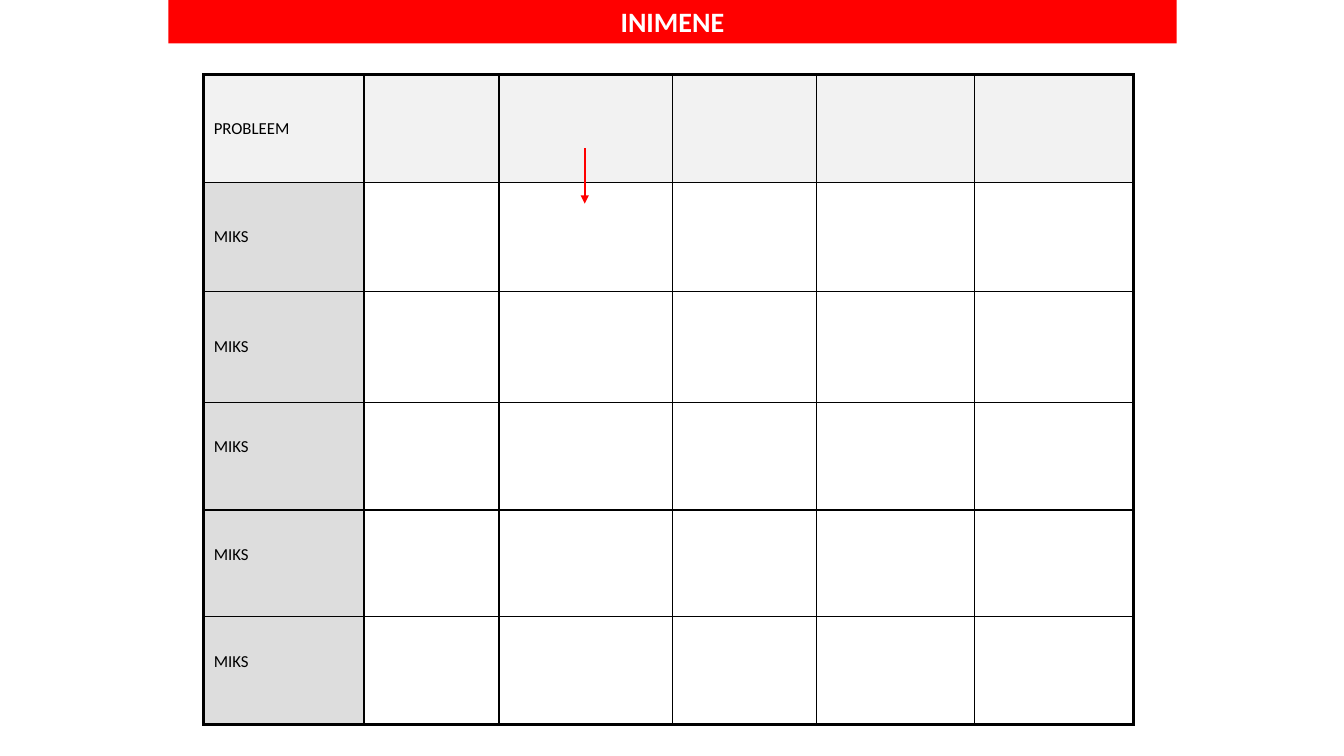
"""Build the INIMENE five-whys slide."""
from dataclasses import dataclass

from lxml import etree
from pptx import Presentation
from pptx.dml.color import RGBColor
from pptx.enum import shapes, text
from pptx.oxml import ns
from pptx.util import Inches, Pt

RED = RGBColor(0xFF, 0x00, 0x00)
WHITE = RGBColor(0xFF, 0xFF, 0xFF)
BLACK = RGBColor(0x00, 0x00, 0x00)
HEADER_GREY = RGBColor(0xE7, 0xE6, 0xE6)
LABEL_GREY = RGBColor(0xDD, 0xDD, 0xDD)
FONT = "Calibri"
COLS = [1.59, 1.34, 1.72, 1.43, 1.57, 1.57]
THIN, THICK = 1, 2.25


@dataclass
class Row:
    label: str
    height: float
    bottom: float = 0.05


ROWS = [
    Row("PROBLEEM", 1.07),
    Row("MIKS", 1.08),
    Row("MIKS", 1.10),
    Row("MIKS", 1.07, 0.23),
    Row("MIKS", 1.06, 0.23),
    Row("MIKS", 1.07, 0.23),
]


def write(tf, content: str, *, size: float, color: RGBColor, bold: bool = False,
          align=text.PP_ALIGN.LEFT) -> None:
    """Put one formatted run in a text frame."""
    p = tf.paragraphs[0]
    p.alignment = align
    r = p.add_run()
    r.text = content
    r.font.name, r.font.size, r.font.bold = FONT, Pt(size), bold
    r.font.color.rgb = color


def add_banner(s) -> None:
    """Draw the red title bar."""
    sp = s.shapes.add_shape(shapes.MSO_SHAPE.RECTANGLE, Inches(1.67), Inches(0),
                            Inches(10), Inches(0.43))
    sp.shadow.inherit = False
    sp.fill.solid()
    sp.fill.fore_color.rgb = RED
    sp.line.fill.background()
    tf = sp.text_frame
    tf.word_wrap = True
    tf.vertical_anchor = text.MSO_ANCHOR.MIDDLE
    write(tf, "INIMENE", size=20, color=WHITE, bold=True, align=text.PP_ALIGN.CENTER)


def fill_cell(cell, row: int, col: int) -> None:
    """Shade the header row and the label column."""
    if row == 0:
        cell.fill.solid()
        cell.fill.fore_color.rgb = HEADER_GREY
        clr = cell._tc.tcPr.find(".//" + ns.qn("a:srgbClr"))
        etree.SubElement(clr, ns.qn("a:alpha"), val="50000")
    elif col == 0:
        cell.fill.solid()
        cell.fill.fore_color.rgb = LABEL_GREY
    else:
        cell.fill.background()


def border_cell(cell, row: int, col: int) -> None:
    """Draw thin inner borders and a thick outer frame."""
    outer = {"L": col == 0, "R": col == len(COLS) - 1,
             "T": row == 0, "B": row == len(ROWS) - 1}
    for i, (side, is_outer) in enumerate(outer.items()):
        ln = etree.Element(ns.qn(f"a:ln{side}"), w=str(Pt(THICK if is_outer else THIN)))
        solid = etree.SubElement(ln, ns.qn("a:solidFill"))
        etree.SubElement(solid, ns.qn("a:srgbClr"), val=str(BLACK))
        cell._tc.tcPr.insert(i, ln)


def add_grid(s) -> None:
    """Draw the table of problem and whys."""
    tbl = s.shapes.add_table(len(ROWS), len(COLS), Inches(2.02), Inches(0.74),
                             Inches(sum(COLS)), Inches(sum(r.height for r in ROWS))).table
    tbl.first_row = tbl.horz_banding = False
    for column, width in zip(tbl.columns, COLS):
        column.width = Inches(width)
    for i, row in enumerate(ROWS):
        tbl.rows[i].height = Inches(row.height)
        for j in range(len(COLS)):
            cell = tbl.cell(i, j)
            fill_cell(cell, i, j)
            border_cell(cell, i, j)
        label = tbl.cell(i, 0)
        label.vertical_anchor = text.MSO_ANCHOR.MIDDLE
        label.margin_bottom = Inches(row.bottom)
        write(label.text_frame, row.label, size=12, color=BLACK)


def add_arrow(s) -> None:
    """Draw the red arrow from the problem to the first why."""
    sp = s.shapes.add_connector(shapes.MSO_CONNECTOR.STRAIGHT, Inches(5.8), Inches(1.47),
                                Inches(5.8), Inches(2.02))
    sp.line.color.rgb = RED
    sp.line.width = Pt(1.5)
    etree.SubElement(sp.line._get_or_add_ln(), ns.qn("a:tailEnd"), type="triangle")
    etree.SubElement(sp._element.spPr, ns.qn("a:effectLst"))


def main() -> None:
    """Build and save the presentation."""
    prs = Presentation()
    prs.slide_width, prs.slide_height = Inches(13.33), Inches(7.5)
    s = prs.slides.add_slide(prs.slide_layouts[6])
    add_banner(s)
    add_grid(s)
    add_arrow(s)
    prs.save("out.pptx")


if __name__ == "__main__":
    main()
